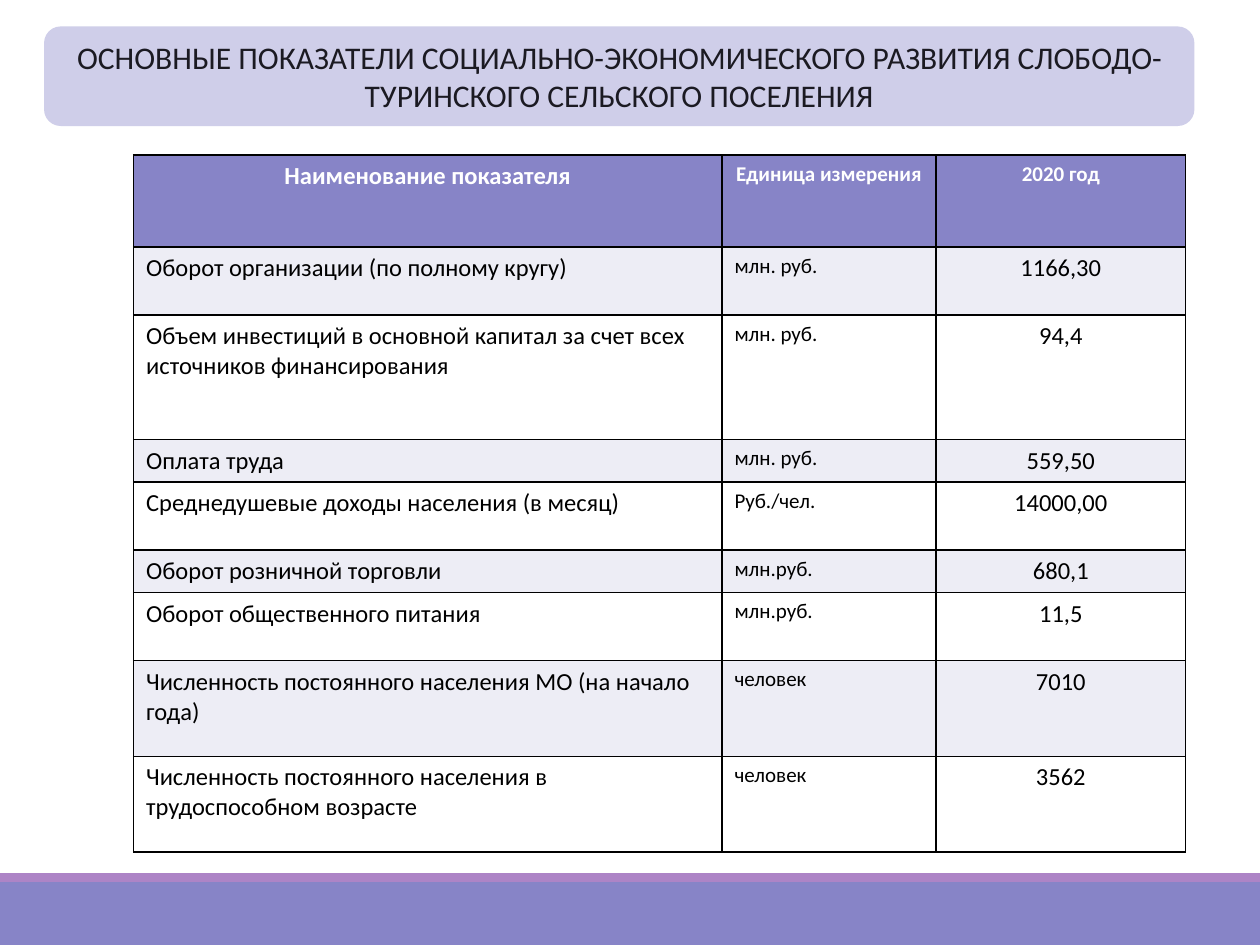
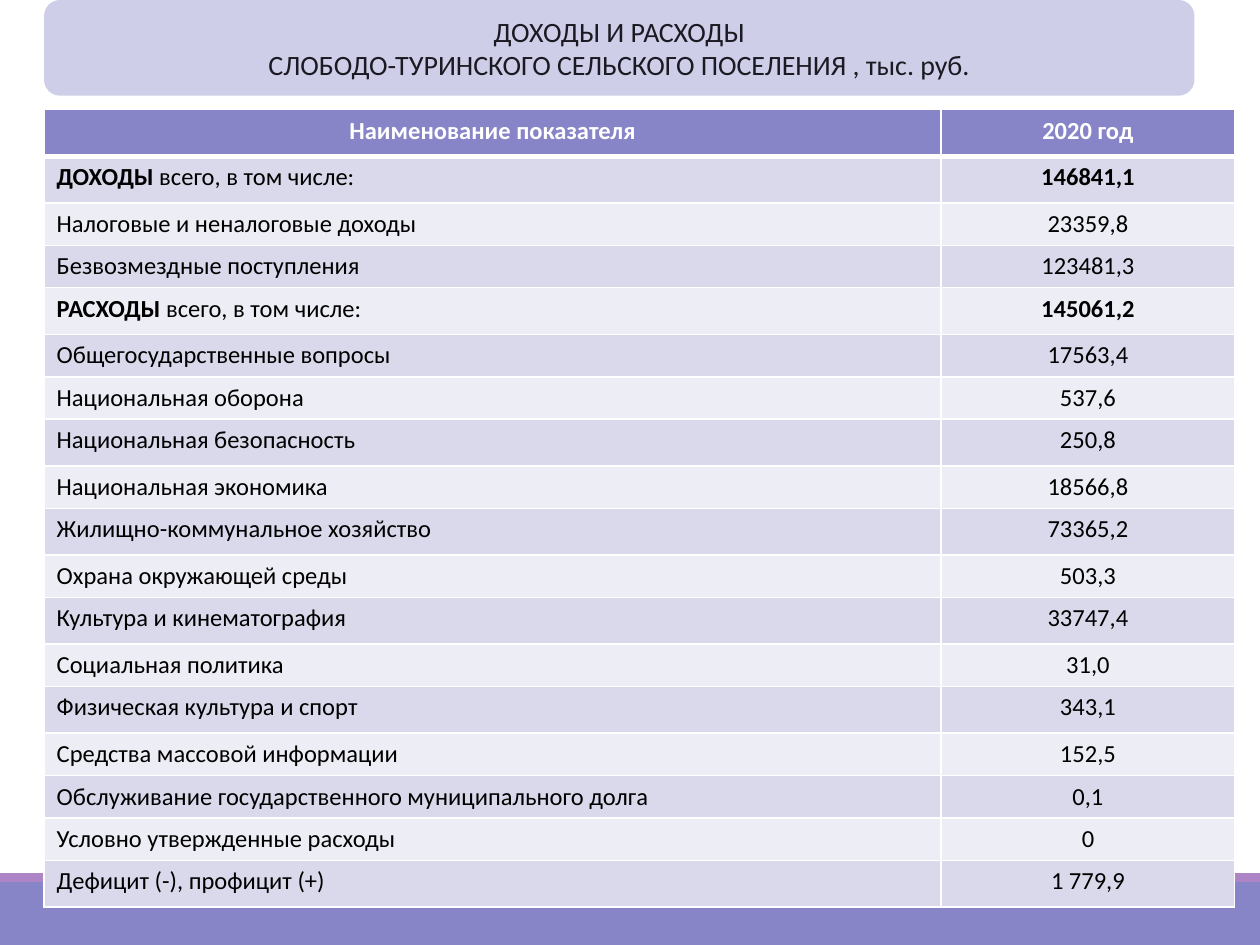
from dataclasses import dataclass

from lxml.etree import SubElement
from pptx import Presentation
from pptx.dml.color import RGBColor
from pptx.enum.shapes import MSO_SHAPE as Shape
from pptx.enum.text import MSO_ANCHOR as Anchor, PP_ALIGN as Align
from pptx.oxml.ns import qn
from pptx.util import Inches, Pt


@dataclass(frozen=True)
class Theme:
    font: str = "Calibri"
    main: str = "8784C7"
    accent: str = "AD84C6"
    title_fill: str = "CFCEE9"
    title_ink: str = "1B1A22"
    stripe: str = "D9D9EB"
    pale: str = "EDEDF5"
    white: str = "FFFFFF"
    black: str = "000000"
    body_size: int = 14
    small_size: int = 12


THEME = Theme()

INDICATORS = [
    ("Наименование показателя", "Единица измерения", "2020 год"),
    ("Оборот организации (по полному кругу)", "млн. руб.", "1166,30"),
    ("Объем инвестиций в основной капитал за счет всех источников финансирования",
     "млн. руб.", "94,4"),
    ("Оплата труда", "млн. руб.", "559,50"),
    ("Среднедушевые доходы населения (в месяц)", "Руб./чел.", "14000,00"),
    ("Оборот розничной торговли", "млн.руб.", "680,1"),
    ("Оборот общественного питания", "млн.руб.", "11,5"),
    ("Численность постоянного населения МО (на начало года)", "человек", "7010"),
    ("Численность постоянного населения в трудоспособном возрасте",
     "человек", "3562"),
]
INDICATOR_HEIGHTS = [0.73, 0.54, 0.99, 0.32, 0.54, 0.32, 0.54, 0.76, 0.76]

BUDGET = [
    ("Наименование показателя", "2020 год"),
    ("ДОХОДЫ всего, в том числе:", "146841,1"),
    ("Налоговые и неналоговые доходы", "23359,8"),
    ("Безвозмездные поступления", "123481,3"),
    ("РАСХОДЫ всего, в том числе:", "145061,2"),
    ("Общегосударственные вопросы", "17563,4"),
    ("Национальная оборона", "537,6"),
    ("Национальная безопасность", "250,8"),
    ("Национальная экономика", "18566,8"),
    ("Жилищно-коммунальное хозяйство", "73365,2"),
    ("Охрана окружающей среды", "503,3"),
    ("Культура и кинематография", "33747,4"),
    ("Социальная политика", "31,0"),
    ("Физическая культура и спорт", "343,1"),
    ("Средства массовой информации", "152,5"),
    ("Обслуживание государственного муниципального долга", "0,1"),
    ("Условно утвержденные расходы", "0"),
    ("Дефицит (-), профицит (+)", "1 779,9"),
]
TOTAL_ROWS = {1, 4}
TALL_ROWS = {0, 1, 4, 7, 9, 11, 13, 17}


def color(value):
    return RGBColor.from_string(value)


def add_span(para, text, size, ink, bold=False):
    span = para.add_run()
    span.text = text
    formats = {"name": THEME.font, "size": Pt(size), "bold": bold}
    for name, value in formats.items():
        setattr(span.font, name, value)
    span.font.color.rgb = color(ink)


def add_panel(page, kind, box, fill):
    panel = page.shapes.add_shape(kind, *map(Inches, box))
    panel.shadow.inherit = False
    panel.fill.solid()
    panel.fill.fore_color.rgb = color(fill)
    panel.line.fill.background()
    return panel


def add_footer(page, box):
    left, top, width, height = box
    strip = 0.07
    add_panel(page, Shape.RECTANGLE, (left, top + strip, width, height - strip),
              THEME.main)
    add_panel(page, Shape.RECTANGLE, (left, top, width, strip), THEME.accent)


def add_title(page, box, lines, size):
    frame = add_panel(page, Shape.ROUNDED_RECTANGLE, box, THEME.title_fill).text_frame
    frame.word_wrap = True
    frame.vertical_anchor = Anchor.MIDDLE
    for index, line in enumerate(lines):
        para = frame.add_paragraph() if index else frame.paragraphs[0]
        para.alignment = Align.CENTER
        add_span(para, line, size, THEME.title_ink)


def set_borders(cell, ink, widths):
    properties = cell._tc.get_or_add_tcPr()
    for side, width in zip("LRTB", widths):
        line = SubElement(properties, qn(f"a:ln{side}"), w=str(Pt(width)))
        solid = SubElement(line, qn("a:solidFill"))
        SubElement(solid, qn("a:srgbClr"), val=ink)


def add_grid(page, box, rows, widths, heights, stripes, border,
             header_line=1, small_column=None, totals=()):
    left, top = box
    place = (left, top, sum(widths), sum(heights))
    table = page.shapes.add_table(len(rows), len(widths), *map(Inches, place)).table
    for column, width in zip(table.columns, widths):
        column.width = Inches(width)
    for row, height in zip(table.rows, heights):
        row.height = Inches(height)

    for r, texts in enumerate(rows):
        header = r == 0
        for c, text in enumerate(texts):
            cell = table.cell(r, c)
            set_borders(cell, border, (1, 1, header_line if r == 1 else 1,
                                       header_line if header else 1))
            cell.fill.solid()
            cell.fill.fore_color.rgb = color(
                THEME.main if header else stripes[(r - 1) % 2])
            last = c == len(widths) - 1
            small = small_column is not None and (
                c == small_column or header and last)
            size = THEME.small_size if small else THEME.body_size
            ink = THEME.white if header else THEME.black
            para = cell.text_frame.paragraphs[0]
            para.alignment = Align.CENTER if header or last else Align.LEFT
            if r in totals and c == 0:
                lead, rest = text.split(" ", 1)
                add_span(para, lead + " ", size, ink, True)
                add_span(para, rest, size, ink)
            else:
                add_span(para, text, size, ink, header or r in totals)


def add_page(deck):
    page = deck.slides.add_slide(deck.slide_layouts[6])
    add_footer(page, (0, 6.93, 10, 0.57))
    return page


def indicators_page(deck):
    page = add_page(deck)
    add_title(page, (0.35, 0.21, 9.13, 0.79),
              ["ОСНОВНЫЕ ПОКАЗАТЕЛИ СОЦИАЛЬНО-ЭКОНОМИЧЕСКОГО РАЗВИТИЯ "
               "СЛОБОДО-ТУРИНСКОГО СЕЛЬСКОГО ПОСЕЛЕНИЯ"], 18)
    add_grid(page, (1.06, 1.23), INDICATORS, [4.67, 1.7, 1.98], INDICATOR_HEIGHTS,
             (THEME.pale, THEME.white), THEME.black, small_column=1)


def budget_page(deck):
    page = add_page(deck)
    add_title(page, (0.35, 0, 9.13, 0.76),
              ["ДОХОДЫ И РАСХОДЫ",
               "СЛОБОДО-ТУРИНСКОГО СЕЛЬСКОГО ПОСЕЛЕНИЯ , тыс. руб."], 16)
    heights = [0.37 if r in TALL_ROWS else 0.33 for r in range(len(BUDGET))]
    add_grid(page, (0.35, 0.87), BUDGET, [7.12, 2.33], heights,
             (THEME.stripe, THEME.pale), THEME.white,
             header_line=3, totals=TOTAL_ROWS)


def main():
    deck = Presentation()
    deck.slide_width, deck.slide_height = Inches(10), Inches(7.5)
    indicators_page(deck)
    budget_page(deck)
    deck.save("out.pptx")


if __name__ == "__main__":
    main()
